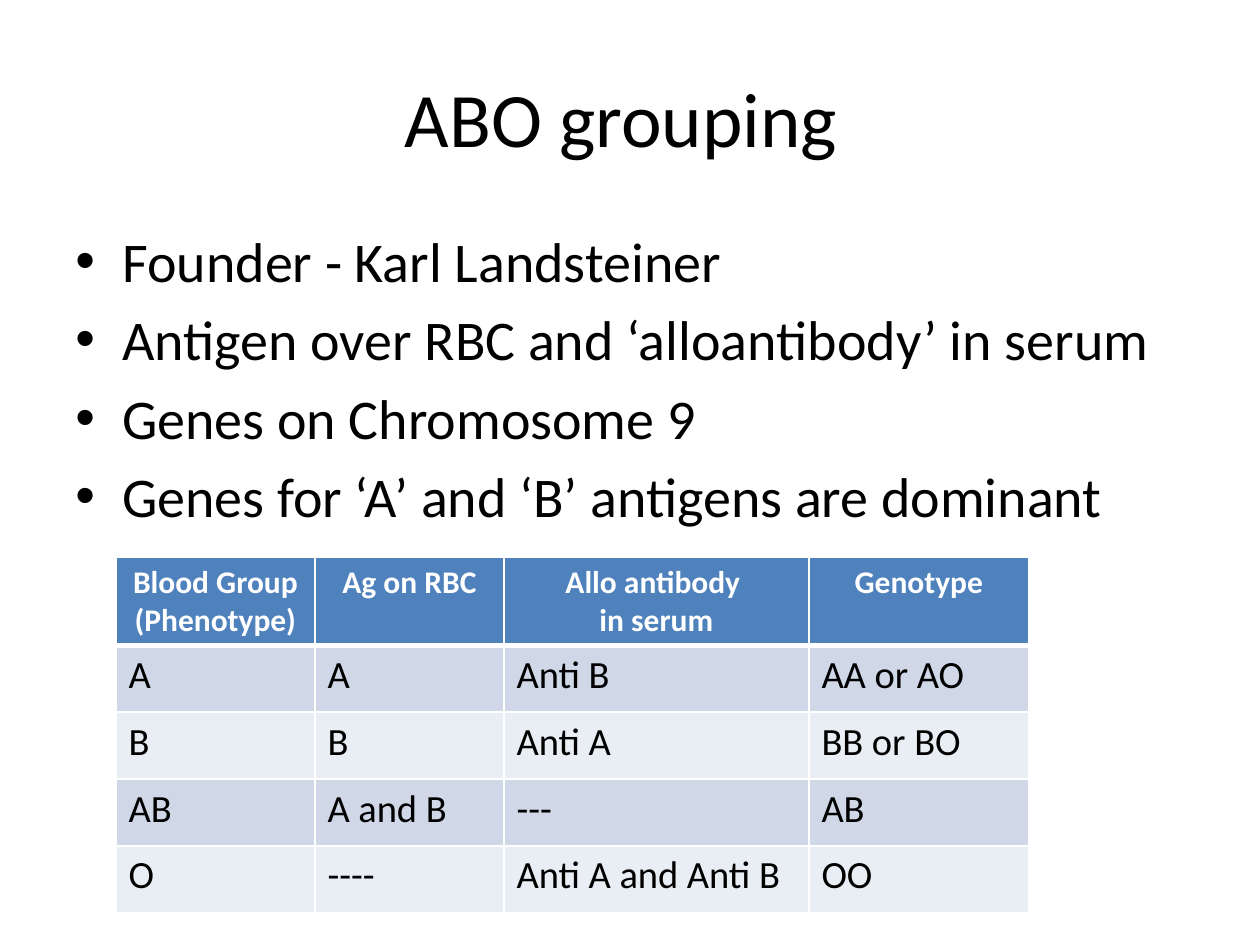
from typing import NamedTuple

from lxml import etree
from pptx import Presentation
from pptx.dml.color import RGBColor
from pptx.enum.text import MSO_ANCHOR, PP_ALIGN
from pptx.oxml.ns import qn
from pptx.util import Pt

EMU_PER_PX = 914400 / 126
FONT = "Calibri"
CENTER, LEFT = PP_ALIGN.CENTER, PP_ALIGN.LEFT
MIDDLE, TOP = MSO_ANCHOR.MIDDLE, MSO_ANCHOR.TOP
BLACK, WHITE = "000000", "FFFFFF"
HEADER_FILL = "4F81BD"
BAND_FILLS = ("D0D8E8", "E9EDF4")
BULLET_INDENT = 47
COLUMN_WIDTHS = (199, 189, 305, 220)
HEADER_HEIGHT, ROW_HEIGHT = 88, 67

BULLETS = (
    "Founder - Karl Landsteiner",
    "Antigen over RBC and ‘alloantibody’ in serum",
    "Genes on Chromosome 9",
    "Genes for ‘A’ and ‘B’ antigens are dominant",
)
BLOOD_GROUPS = (
    ("Blood Group (Phenotype)", "Ag on RBC", "Allo antibody \vin serum", "Genotype"),
    ("A", "A", "Anti B", "AA or AO"),
    ("B", "B", "Anti A", "BB or BO"),
    ("AB", "A and B", "---", "AB"),
    ("O", "----", "Anti A and Anti B", "OO"),
)


class Area(NamedTuple):
    left: int
    top: int
    width: int
    height: int


class TextStyle(NamedTuple):
    size: int
    color: str = BLACK
    bold: bool = False
    align: int = LEFT


TITLE_AREA = Area(63, 38, 1134, 157)
BODY_AREA = Area(63, 220, 1134, 624)
TABLE_AREA = Area(116, 557, sum(COLUMN_WIDTHS),
                  HEADER_HEIGHT + ROW_HEIGHT * (len(BLOOD_GROUPS) - 1))
TITLE_STYLE = TextStyle(44, align=CENTER)
BODY_STYLE = TextStyle(32)
HEADER_STYLE = TextStyle(18, WHITE, True, CENTER)
CELL_STYLE = TextStyle(22)


def px(length: int) -> int:
    return round(length * EMU_PER_PX)


def rgb(color: str) -> RGBColor:
    return RGBColor.from_string(color)


def style_para(para, style: TextStyle) -> None:
    para.alignment = style.align
    for span in para.runs:
        span.font.name = FONT
        span.font.size = Pt(style.size)
        span.font.bold = style.bold
        span.font.color.rgb = rgb(style.color)


def add_text(page, area: Area, lines: tuple, style: TextStyle, anchor: int):
    box = page.shapes.add_textbox(*map(px, area))
    frame = box.text_frame
    frame.word_wrap = True
    frame.vertical_anchor = anchor
    frame.text = "\n".join(lines)
    for para in frame.paragraphs:
        style_para(para, style)
    return frame


def add_bullet(para) -> None:
    para.space_before = Pt(6.4)
    properties = para._p.get_or_add_pPr()
    properties.set("marL", str(px(BULLET_INDENT)))
    properties.set("indent", str(-px(BULLET_INDENT)))
    etree.SubElement(properties, qn("a:buFont"), typeface="Arial")
    etree.SubElement(properties, qn("a:buChar"), char="•")


def set_borders(cell, top: int, bottom: int) -> None:
    """Draw white borders, with top and bottom widths in points."""
    properties = cell._tc.get_or_add_tcPr()
    for side, width in (("L", 1), ("R", 1), ("T", top), ("B", bottom)):
        line = etree.SubElement(properties, qn(f"a:ln{side}"), w=str(Pt(width)))
        fill = etree.SubElement(line, qn("a:solidFill"))
        etree.SubElement(fill, qn("a:srgbClr"), val=WHITE)


def add_blood_group_table(page) -> None:
    frame = page.shapes.add_table(len(BLOOD_GROUPS), len(COLUMN_WIDTHS),
                                  *map(px, TABLE_AREA))
    table = frame.table
    for column, width in zip(table.columns, COLUMN_WIDTHS):
        column.width = px(width)
    for index, texts in enumerate(BLOOD_GROUPS):
        is_header = index == 0
        table.rows[index].height = px(HEADER_HEIGHT if is_header else ROW_HEIGHT)
        fill = HEADER_FILL if is_header else BAND_FILLS[(index - 1) % 2]
        for cell, text in zip(table.rows[index].cells, texts):
            cell.text_frame.text = text
            style_para(cell.text_frame.paragraphs[0],
                       HEADER_STYLE if is_header else CELL_STYLE)
            set_borders(cell, top=3 if index == 1 else 1, bottom=3 if is_header else 1)
            cell.fill.solid()
            cell.fill.fore_color.rgb = rgb(fill)


def main() -> None:
    deck = Presentation()
    deck.slide_width, deck.slide_height = px(1260), px(945)
    page = deck.slides.add_slide(deck.slide_layouts[6])
    add_text(page, TITLE_AREA, ("ABO grouping ",), TITLE_STYLE, MIDDLE)
    body = add_text(page, BODY_AREA, BULLETS, BODY_STYLE, TOP)
    for para in body.paragraphs:
        add_bullet(para)
    add_blood_group_table(page)
    deck.save("out.pptx")


if __name__ == "__main__":
    main()
